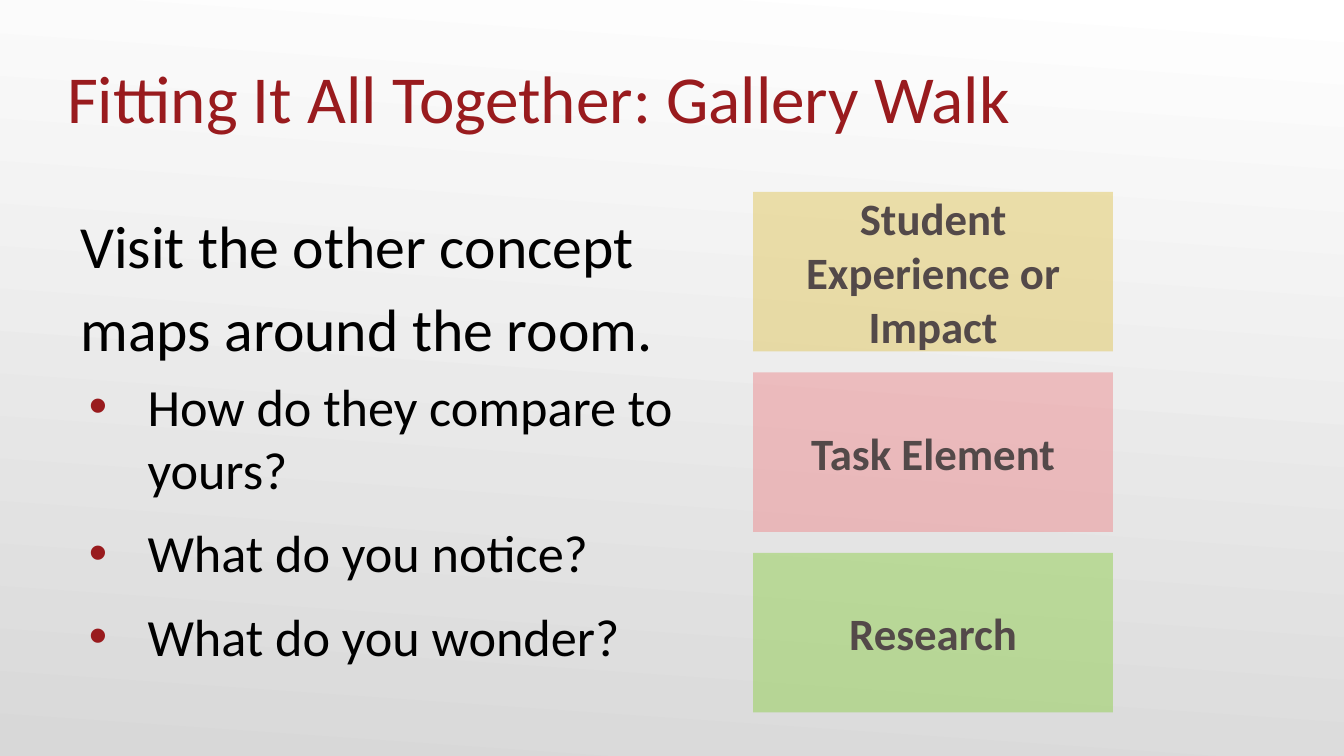
import lxml.etree
import pptx
import pptx.dml.color
import pptx.enum.shapes
import pptx.enum.text
import pptx.oxml.ns
import pptx.util

PX = 9525
FONT = "Calibri"
RED = "991B1E"
BLACK = "000000"
GREY = "534949"


def px(length):
    return pptx.util.Emu(length * PX)


def color(value):
    return pptx.dml.color.RGBColor.from_string(value)


def add_element(parent, tag, **attributes):
    return lxml.etree.SubElement(parent, pptx.oxml.ns.qn(tag), attributes)


def write(paragraph, text, size, ink, bold=False, align=None, line=1.0, after=0, bullet=None):
    paragraph.alignment = align
    paragraph.line_spacing = line
    paragraph.space_after = pptx.util.Pt(after)
    if bullet:
        properties = paragraph._p.get_or_add_pPr()
        properties.set("marL", str(px(48)))
        properties.set("indent", str(px(-42)))
        add_element(add_element(properties, "a:buClr"), "a:srgbClr", val=bullet)
        add_element(properties, "a:buFont", typeface="Arial")
        add_element(properties, "a:buChar", char="•")
    run = paragraph.add_run()
    run.text = text
    run.font.name = FONT
    run.font.size = pptx.util.Pt(size)
    run.font.bold = bold
    run.font.color.rgb = color(ink)


class SlideBuilder:
    """Holds the slide and adds styled elements to it."""

    def __init__(self, slide):
        self.slide = slide

    def background(self, start, end, angle):
        fill = self.slide.background.fill
        fill.gradient()
        fill.gradient_angle = 360 - angle
        for stop, value in zip(fill.gradient_stops, (start, end)):
            stop.color.rgb = color(value)

    def text(self, left, top, width, height, paragraphs):
        shape = self.slide.shapes.add_textbox(px(left), px(top), px(width), px(height))
        frame = shape.text_frame
        frame.word_wrap = True
        for index, (text, style) in enumerate(paragraphs):
            paragraph = frame.add_paragraph() if index else frame.paragraphs[0]
            write(paragraph, text, **style)
        return frame

    def title(self, left, top, width, height, text):
        frame = self.text(left, top, width, height, [(text, dict(size=36, ink=RED))])
        frame.margin_left = frame.margin_right = frame.margin_bottom = 0
        frame.vertical_anchor = pptx.enum.text.MSO_ANCHOR.MIDDLE

    def card(self, left, top, width, height, text, fill):
        shape = self.slide.shapes.add_shape(
            pptx.enum.shapes.MSO_SHAPE.RECTANGLE, px(left), px(top), px(width), px(height))
        shape.shadow.inherit = False
        shape.line.fill.background()
        shape.fill.solid()
        shape.fill.fore_color.rgb = color(fill)
        solid_color = shape._element.spPr.find(".//" + pptx.oxml.ns.qn("a:srgbClr"))
        add_element(solid_color, "a:alpha", val="50000")
        frame = shape.text_frame
        frame.word_wrap = True
        frame.vertical_anchor = pptx.enum.text.MSO_ANCHOR.MIDDLE
        write(frame.paragraphs[0], text, size=24, ink=GREY, bold=True,
              align=pptx.enum.text.PP_ALIGN.CENTER)


def main():
    presentation = pptx.Presentation()
    presentation.slide_width = px(960)
    presentation.slide_height = px(540)
    builder = SlideBuilder(presentation.slides.add_slide(presentation.slide_layouts[6]))
    builder.background("FFFFFF", "D8D8D8", angle=94)
    builder.title(48, 22, 864, 90, "Fitting It All Together: Gallery Walk")

    question = dict(size=28, ink=BLACK, bullet=RED, line=1.15, after=6)
    builder.text(48, 137, 444, 372, [
        ("Visit the other concept maps around the room.",
         dict(size=32, ink=BLACK, line=1.15, after=6)),
        ("How do they compare to yours?", question | dict(line=1.0)),
        ("What do you notice?", question),
        ("What do you wonder?", question | dict(after=0)),
    ])

    cards = [
        ("Student Experience or Impact", "E1C65C"),
        ("Task Element", "EC8C90"),
        ("Research", "92D050"),
    ]
    height, gap = 114, 15
    for row, (label, fill) in enumerate(cards):
        builder.card(538, 137 + row * (height + gap), 257, height, label, fill)

    presentation.save("out.pptx")


if __name__ == "__main__":
    main()
